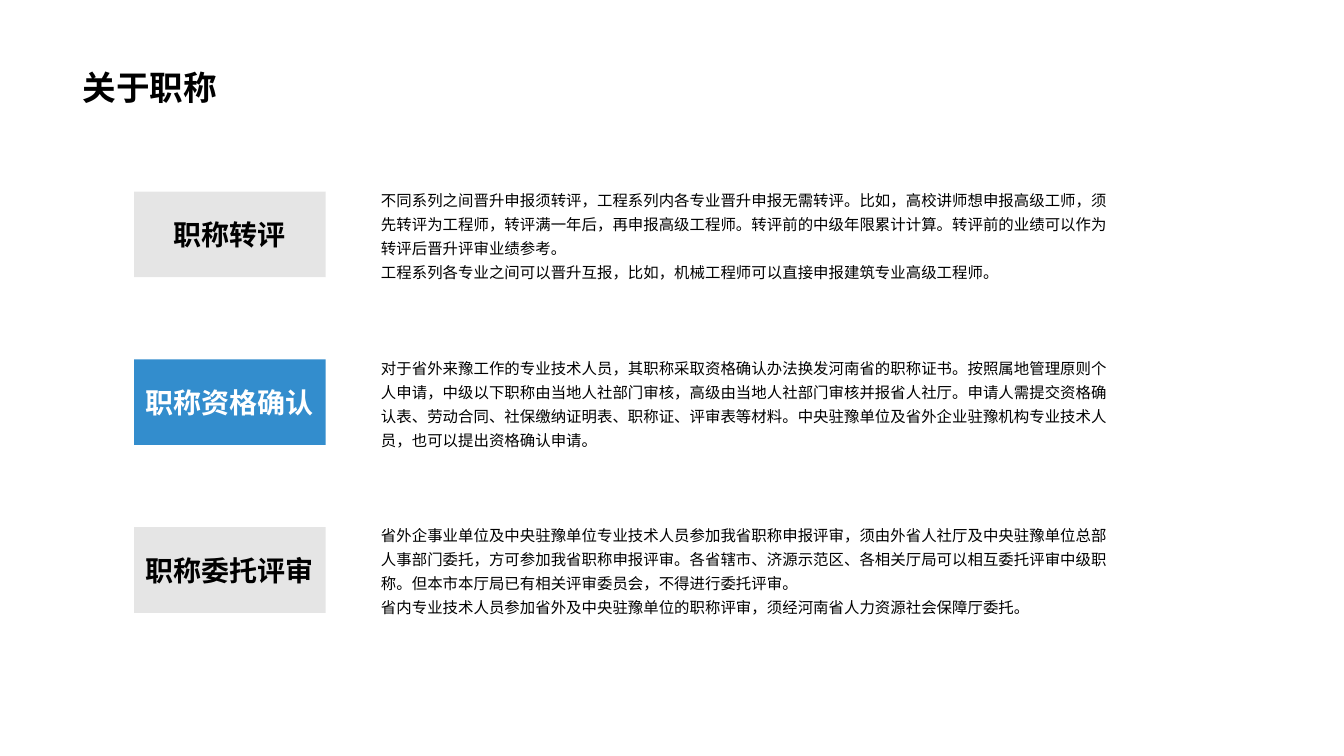
from lxml import etree
from pptx import Presentation
from pptx import util as u
from pptx.dml.color import RGBColor
from pptx.enum import shapes, text
from pptx.oxml.ns import qn

FONT = "Arial"
BLACK, WHITE, GREY, BLUE = "000000", "FFFFFF", "808080", "338DCD"
FIRST_TOP, ROW_PITCH = 1.9, 1.665

# label, fill, opacity in percent, label colour, paragraphs
TOPICS = [
    ("职称转评", GREY, 20, BLACK, [
        "不同系列之间晋升申报须转评，工程系列内各专业晋升申报无需转评。"
        "比如，高校讲师想申报高级工师，须先转评为工程师，转评满一年后，再申报高级工程师。"
        "转评前的中级年限累计计算。转评前的业绩可以作为转评后晋升评审业绩参考。",
        "工程系列各专业之间可以晋升互报，比如，机械工程师可以直接申报建筑专业高级工程师。",
    ]),
    ("职称资格确认", BLUE, 100, WHITE, [
        "对于省外来豫工作的专业技术人员，其职称采取资格确认办法换发河南省的职称证书。"
        "按照属地管理原则个人申请，中级以下职称由当地人社部门审核，高级由当地人社部门审核并报省人社厅。"
        "申请人需提交资格确认表、劳动合同、社保缴纳证明表、职称证、评审表等材料。"
        "中央驻豫单位及省外企业驻豫机构专业技术人员，也可以提出资格确认申请。",
    ]),
    ("职称委托评审", GREY, 20, BLACK, [
        "省外企事业单位及中央驻豫单位专业技术人员参加我省职称申报评审，"
        "须由外省人社厅及中央驻豫单位总部人事部门委托，方可参加我省职称申报评审。"
        "各省辖市、济源示范区、各相关厅局可以相互委托评审中级职称。"
        "但本市本厅局已有相关评审委员会，不得进行委托评审。",
        "省内专业技术人员参加省外及中央驻豫单位的职称评审，须经河南省人力资源社会保障厅委托。",
    ]),
]


def rgb(value):
    return RGBColor.from_string(value)


def add_span(para, words, size, color, bold=False):
    span = para.add_run()
    span.text = words
    span.font.name = FONT
    span.font.size = u.Pt(size)
    span.font.bold = bold
    span.font.color.rgb = rgb(color)


def set_title(page, words):
    title = page.shapes.title
    title.left, title.top = u.Inches(0.72), u.Inches(0)
    title.width, title.height = u.Inches(11.88), u.Inches(1.12)
    frame = title.text_frame
    frame.auto_size = text.MSO_AUTO_SIZE.NONE
    frame.vertical_anchor = text.MSO_ANCHOR.BOTTOM
    para = frame.paragraphs[0]
    para.alignment = text.PP_ALIGN.LEFT
    para.line_spacing = 0.9
    add_span(para, words, 24, BLACK, bold=True)


def add_label(page, top, words, fill, opacity, color):
    box = page.shapes.add_shape(
        shapes.MSO_SHAPE.RECTANGLE,
        u.Inches(1.33), u.Inches(top), u.Inches(1.9), u.Inches(0.85))
    box.shadow.inherit = False
    box.line.fill.background()
    box.fill.solid()
    box.fill.fore_color.rgb = rgb(fill)
    if opacity < 100:
        tint = box.fill._xPr.find(qn("a:solidFill"))[0]
        etree.SubElement(tint, qn("a:alpha"), val=str(opacity * 1000))
    box.text_frame.vertical_anchor = text.MSO_ANCHOR.MIDDLE
    para = box.text_frame.paragraphs[0]
    para.alignment = text.PP_ALIGN.CENTER
    add_span(para, words, 20, color, bold=True)


def add_description(page, top, paragraphs):
    box = page.shapes.add_textbox(
        u.Inches(3.68), u.Inches(top), u.Inches(7.51), u.Inches(1.06))
    frame = box.text_frame
    frame.word_wrap = True
    frame.auto_size = text.MSO_AUTO_SIZE.SHAPE_TO_FIT_TEXT
    for index, words in enumerate(paragraphs):
        para = frame.add_paragraph() if index else frame.paragraphs[0]
        para.line_spacing = 1.3
        add_span(para, words, 11, BLACK)


def main():
    deck = Presentation()
    deck.slide_width, deck.slide_height = u.Inches(13.33), u.Inches(7.5)
    page = deck.slides.add_slide(deck.slide_layouts.get_by_name("Title Only"))

    set_title(page, "关于职称")

    # One row per topic: label on the left, description on the right
    for row, (label, fill, opacity, color, paragraphs) in enumerate(TOPICS):
        top = FIRST_TOP + row * ROW_PITCH
        add_label(page, top, label, fill, opacity, color)
        add_description(page, top - 0.11, paragraphs)

    deck.save("out.pptx")


if __name__ == "__main__":
    main()
